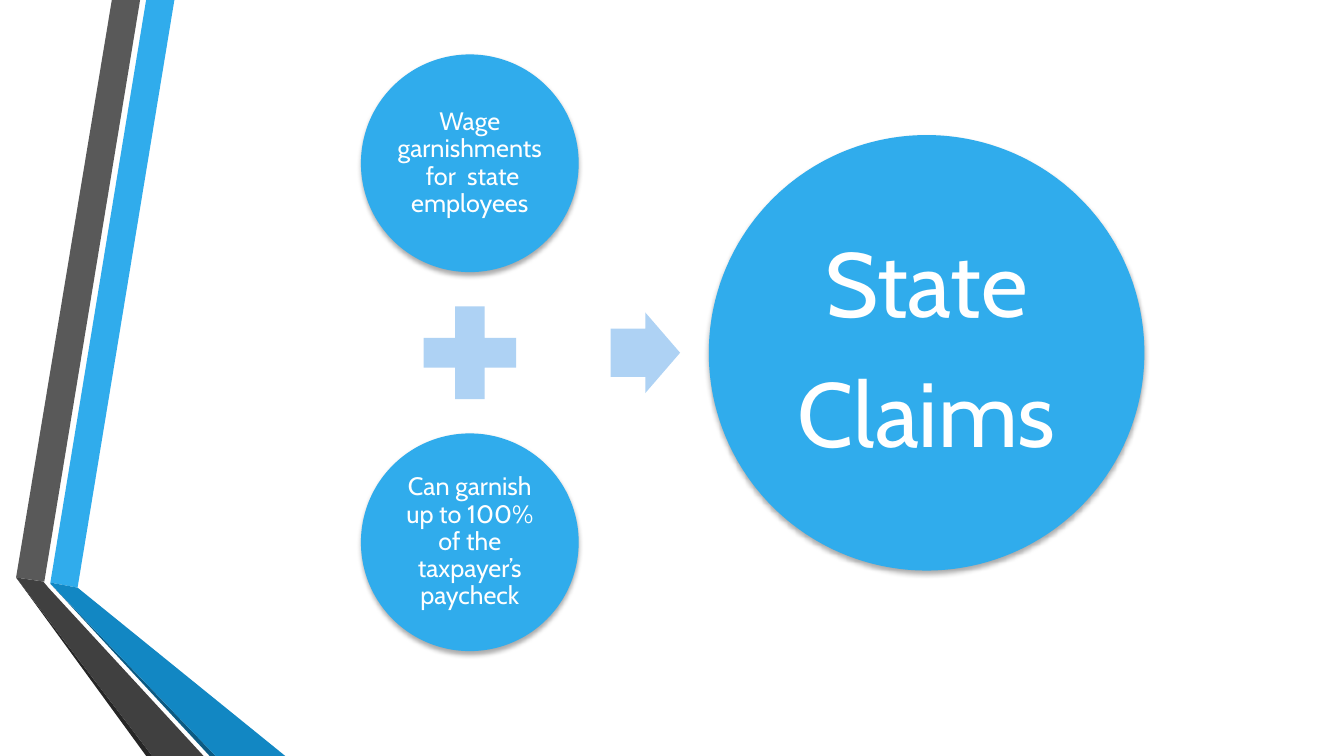
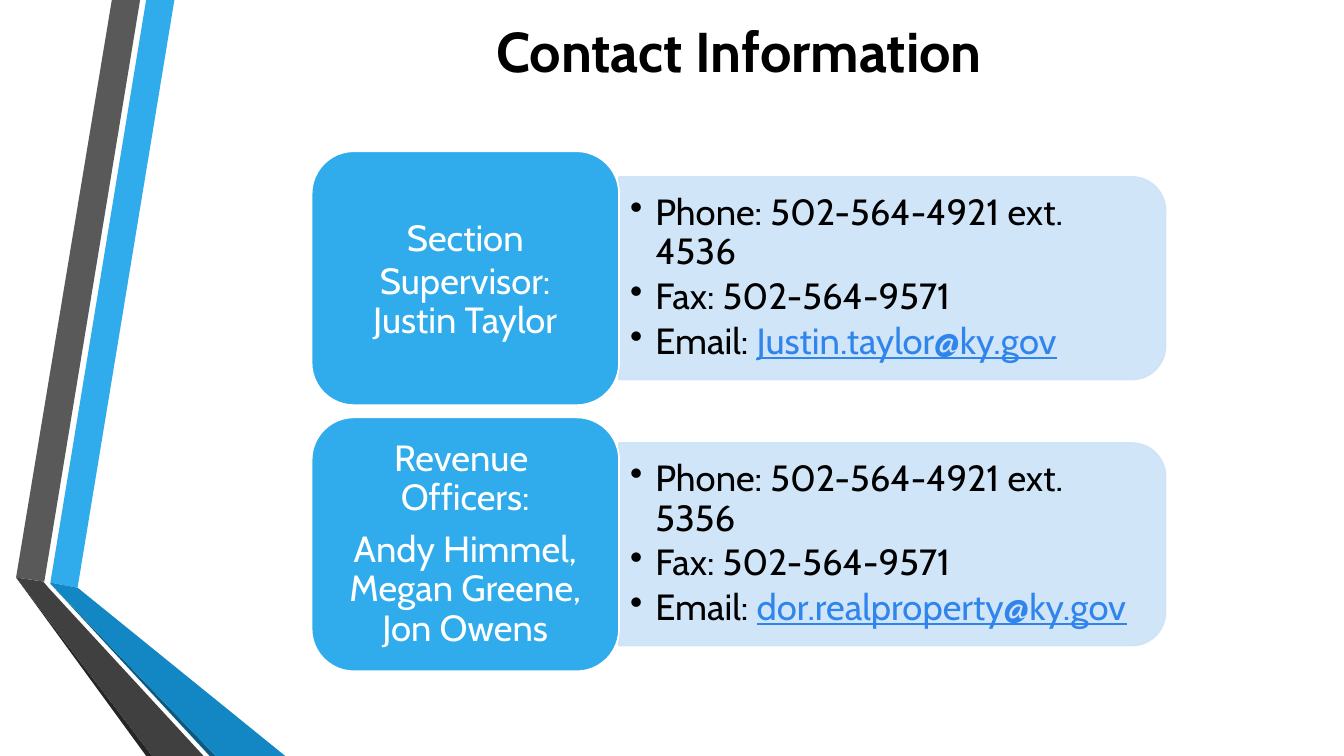
from pptx import Presentation
from pptx.dml.color import RGBColor
from pptx.enum.shapes import MSO_SHAPE as Shape
from pptx.enum.text import MSO_ANCHOR as Anchor, PP_ALIGN as Align
from pptx.oxml.ns import qn
from pptx.util import Inches, Pt
from lxml.etree import SubElement

# Shared style
FONT = "Cabin"
COLORS = {
    "blue": "30ACEC", "deep blue": "1287C3", "navy": "0C5A82",
    "gray": "595959", "dark gray": "404040", "charcoal": "262626",
    "pale blue": "AED2F4", "panel": "CDE3F8", "link": "3085ED",
    "white": "FFFFFF", "black": "000000",
}
RIBBON = [
    ("blue", [(0.5, 5.78), (0.77, 5.83), (1.73, 0), (1.45, 0)]),
    ("gray", [(1.39, 0), (1.11, 0), (0.16, 5.73), (0.44, 5.77)]),
    ("charcoal", [(0.16, 5.73), (1.45, 7.5), (1.51, 7.5)]),
    ("navy", [(0.5, 5.79), (2.08, 7.5), (2.14, 7.5)]),
    ("deep blue", [(0.5, 5.79), (2.14, 7.5), (2.83, 7.5), (0.77, 5.83), (0.5, 5.78)]),
    ("dark gray", [(2.02, 7.5), (0.48, 5.83), (0.43, 5.77), (0.16, 5.73), (1.51, 7.5)]),
]

# Claims diagram: each circle is (centre x, centre y, diameter, inset, text size, paragraphs)
MIDDLE_Y = 3.5
SOURCES_X = 4.66
CIRCLES = [
    (SOURCES_X, MIDDLE_Y - 1.88, 2.16, 0.03, 18, ["Wage garnishments  for  state employees"]),
    (SOURCES_X, MIDDLE_Y + 1.88, 2.16, 0.03, 18,
     ["Can garnish up to 100% of the taxpayer’s paycheck"]),
    (9.19, MIDDLE_Y, 4.32, 0.09, 65, ["State", "Claims"]),
]
# Operators: (preset, centre x, width, height)
OPERATORS = [
    (Shape.MATH_PLUS, SOURCES_X, 1.25, 1.25),
    (Shape.RIGHT_ARROW, 6.4, 0.69, 0.8),
]

# Contact rows
CONTACT_TITLE = "Contact Information"
CONTACTS = [
    {"label": ["Section Supervisor:", "Justin Taylor"], "tight": True,
     "phone": "502-564-4921 ext. 4536", "fax": "502-564-9571",
     "email": "Justin.taylor@ky.gov"},
    {"label": ["Revenue  Officers:", "Andy Himmel, Megan Greene, Jon Owens"], "tight": False,
     "phone": "502-564-4921 ext. 5356", "fax": "502-564-9571",
     "email": "dor.realproperty@ky.gov"},
]
ROW_LEFT, ROW_TOP, ROW_PITCH = 3.09, 1.5, 2.64
LABEL_WIDTH, LABEL_HEIGHT = 3.05, 2.52
PANEL_WIDTH, PANEL_HEIGHT = 5.42, 2.01
CONTACT_SIZE = 26


def rgb(name):
    return RGBColor.from_string(COLORS[name])


def paint(shape, fill, line=None):
    shape.shadow.inherit = False
    shape.fill.solid()
    shape.fill.fore_color.rgb = rgb(fill)
    if line:
        shape.line.color.rgb = rgb(line)
        shape.line.width = Pt(1.25)
    else:
        shape.line.fill.background()


def add_preset(page, preset, left, top, width, height, fill, line=None):
    shape = page.shapes.add_shape(
        preset, Inches(left), Inches(top), Inches(width), Inches(height))
    paint(shape, fill, line)
    return shape


def add_centred(page, preset, x, y, width, height, fill, line=None):
    return add_preset(page, preset, x - width / 2, y - height / 2, width, height, fill, line)


def add_shadow(shape):
    effects = shape._element.spPr.find(qn("a:effectLst"))
    shadow = SubElement(effects, qn("a:outerShdw"), blurRad=str(Pt(3.5)),
                        dist=str(Pt(2.2)), dir="5400000", rotWithShape="0")
    color = SubElement(shadow, qn("a:srgbClr"), val=COLORS["black"])
    SubElement(color, qn("a:alpha"), val="32000")


def make_translucent(shape, percent):
    for color in shape._element.spPr.iter(qn("a:srgbClr")):
        SubElement(color, qn("a:alpha"), val=str(percent * 1000))


def style_run(span, size, color, bold=False, underline=False):
    span.font.name = FONT
    span.font.size = Pt(size)
    span.font.color.rgb = rgb(color)
    span.font.bold = bold
    span.font.underline = underline


def set_frame(shape, inset_x, inset_y):
    frame = shape.text_frame
    frame.word_wrap = True
    frame.vertical_anchor = Anchor.MIDDLE
    frame.margin_left = frame.margin_right = Inches(inset_x)
    frame.margin_top = frame.margin_bottom = Inches(inset_y)
    return frame


def write_centred(shape, lines, size, color, inset_x, inset_y, bold=False):
    frame = set_frame(shape, inset_x, inset_y)
    frame.text = "\n".join(lines)
    for para in frame.paragraphs:
        para.alignment = Align.CENTER
        para.line_spacing = 0.9
        para.space_after = Pt(size * 0.35)
        style_run(para.runs[0], size, color, bold)
    return frame


def add_bullet(para):
    props = para._p.get_or_add_pPr()
    props.set("marL", str(Inches(0.25)))
    props.set("indent", str(-Inches(0.25)))
    SubElement(props, qn("a:buChar"), char="•")


def add_page(deck):
    page = deck.slides.add_slide(deck.slide_layouts[6])
    for color, points in RIBBON:
        corners = [(Inches(x), Inches(y)) for x, y in points]
        builder = page.shapes.build_freeform(*corners[0])
        builder.add_line_segments(corners[1:], close=True)
        paint(builder.convert_to_shape(), color)
    return page


def add_title(page, text):
    box = page.shapes.add_textbox(Inches(1.85), 0, Inches(10.96), Inches(1))
    frame = write_centred(box, [text], 40, "black", 0.1, 0.05, bold=True)
    frame.paragraphs[0].line_spacing = 1.0
    frame.paragraphs[0].space_after = Pt(0)


def build_claims(deck):
    page = add_page(deck)
    for x, y, diameter, inset, size, lines in CIRCLES:
        circle = add_centred(page, Shape.OVAL, x, y, diameter, diameter, "blue")
        add_shadow(circle)
        write_centred(circle, lines, size, "white", inset, inset)
    for preset, x, width, height in OPERATORS:
        operator = add_centred(page, preset, x, MIDDLE_Y, width, height, "pale blue")
        if preset == Shape.RIGHT_ARROW:
            operator.adjustments[0] = 0.6


def add_contact(page, contact, top):
    middle = top + LABEL_HEIGHT / 2
    panel_left = ROW_LEFT + LABEL_WIDTH

    # Panel, turned so that its round corners face right
    panel = add_centred(page, Shape.ROUND_2_SAME_RECTANGLE, panel_left + PANEL_WIDTH / 2,
                        middle, PANEL_HEIGHT, PANEL_WIDTH, "panel", "panel")
    panel.rotation = 90
    make_translucent(panel, 90)

    # Contact details
    box = page.shapes.add_textbox(Inches(panel_left), Inches(middle - 0.91),
                                  Inches(5.33), Inches(1.82))
    frame = set_frame(box, 0.11, 0.05)
    details = [f"Phone: {contact['phone']}", f"Fax: {contact['fax']}", "Email: "]
    frame.text = "\n".join(details)
    for para in frame.paragraphs:
        para.line_spacing = 0.9
        para.space_after = Pt(CONTACT_SIZE * 0.15)
        add_bullet(para)
        style_run(para.runs[0], CONTACT_SIZE, "black")
    address = frame.paragraphs[-1].add_run()
    address.text = contact["email"]
    style_run(address, CONTACT_SIZE, "link", underline=True)

    # Label
    label = add_preset(page, Shape.ROUNDED_RECTANGLE, ROW_LEFT, top,
                       LABEL_WIDTH, LABEL_HEIGHT, "blue", "white")
    heading = write_centred(label, contact["label"], CONTACT_SIZE, "white",
                            0.11, 0.05).paragraphs[0]
    if contact["tight"]:
        heading.line_spacing = 1.0
        heading.space_after = Pt(0)


def build_contacts(deck):
    page = add_page(deck)
    add_title(page, CONTACT_TITLE)
    for row, contact in enumerate(CONTACTS):
        add_contact(page, contact, ROW_TOP + row * ROW_PITCH)


def main():
    deck = Presentation()
    deck.slide_width = Inches(13.33)
    deck.slide_height = Inches(7.5)
    build_claims(deck)
    build_contacts(deck)
    deck.save("out.pptx")


if __name__ == "__main__":
    main()
